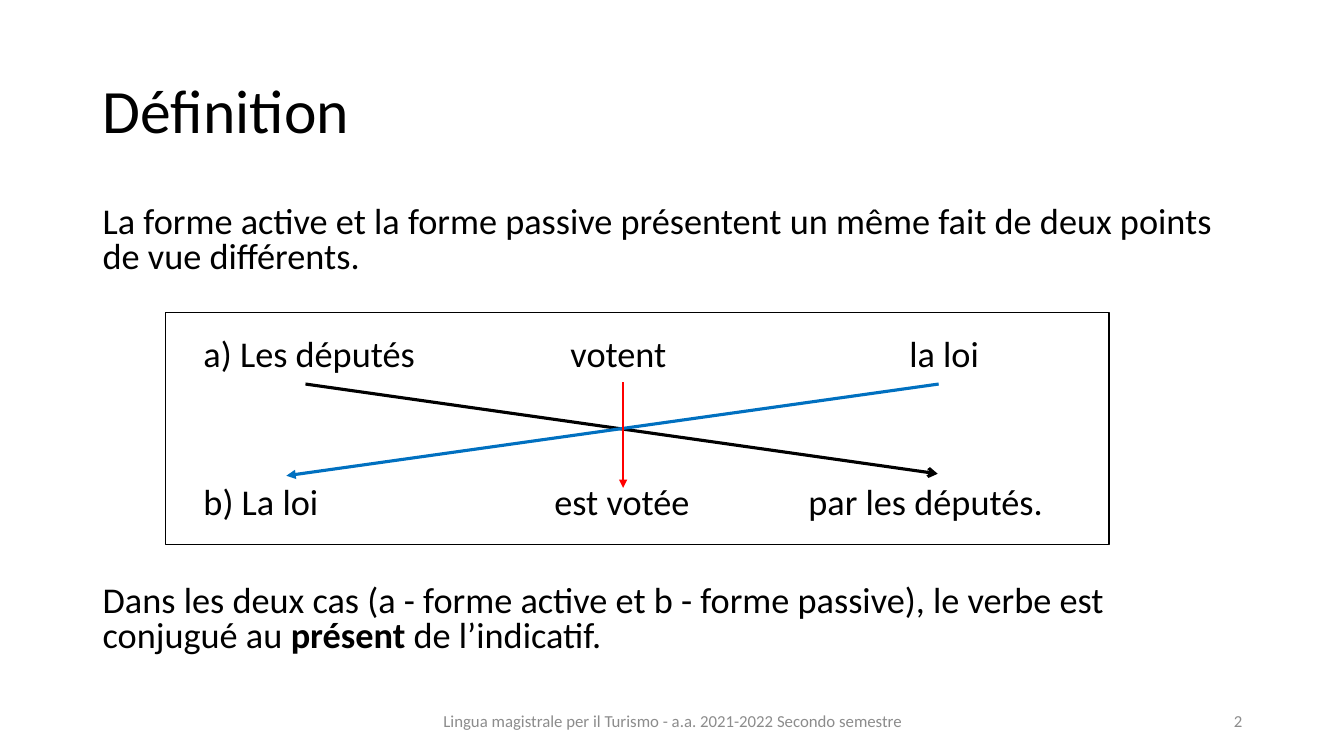
import pptx
import pptx.util
import pptx.dml.color
import pptx.enum.text
import pptx.enum.shapes
import pptx.oxml.ns
from dataclasses import dataclass
from lxml import etree

Inches, Pt = pptx.util.Inches, pptx.util.Pt
Align, Anchor = pptx.enum.text.PP_ALIGN, pptx.enum.text.MSO_ANCHOR
qn = pptx.oxml.ns.qn


@dataclass(frozen=True)
class Theme:
    font: str = "Calibri"
    ink: str = "000000"
    gray: str = "8C8C8C"
    blue: str = "0070C0"
    red: str = "FF0000"
    title: float = 44
    body: float = 25.9
    foot: float = 12


THEME = Theme()


def tint(code):
    return pptx.dml.color.RGBColor.from_string(code)


def frame(slide, box, anchor=Anchor.MIDDLE):
    area = slide.shapes.add_textbox(*map(Inches, box)).text_frame
    area.word_wrap = True
    area.vertical_anchor = anchor
    return area


def write(area, *runs, size=THEME.body, color=THEME.ink, align=Align.LEFT,
          line=1.0, before=0, tabs=()):
    """Add a paragraph; a run is a string or a (string, bold) pair."""
    para = area.paragraphs[0]
    if para.runs:
        para = area.add_paragraph()
    para.alignment = align
    para.line_spacing = line
    para.space_before = Pt(before)
    if tabs:
        stops = etree.SubElement(para._p.get_or_add_pPr(), qn("a:tabLst"))
        for stop in tabs:
            etree.SubElement(stops, qn("a:tab"), pos=str(Inches(stop)), algn="l")
    for item in runs:
        words, bold = (item, False) if isinstance(item, str) else item
        run = para.add_run()
        run.text = words
        font = run.font
        font.name, font.size, font.bold = THEME.font, Pt(size), bold
        font.color.rgb = tint(color)


def title(slide, box):
    write(frame(slide, box), "Définition", size=THEME.title, line=0.9)


def body(slide, box):
    area = frame(slide, box, Anchor.TOP)
    gap, row = 10, 35.3
    write(area, "La forme active et la forme passive présentent un même fait "
          "de deux points de vue différents.", line=0.8, before=gap)
    write(area, "\ta) Les députés\tvotent\tla loi",
          line=0.8, before=gap + row, tabs=(1, 4.64, 8))
    write(area, "\tb) La loi\test votée\tpar les députés.",
          line=0.8, before=gap + 2 * row, tabs=(1, 4.48, 7))
    write(area, "Dans les deux cas (a - forme active et b - forme passive), "
          "le verbe est conjugué au ", ("présent", True), " de l’indicatif.",
          line=0.8, before=gap + row)


def arrow(slide, start, end, color, width, head="triangle"):
    link = slide.shapes.add_connector(
        pptx.enum.shapes.MSO_CONNECTOR.STRAIGHT, *map(Inches, start + end))
    link.line.color.rgb = tint(color)
    link.line.width = Pt(width)
    etree.SubElement(link.line._get_or_add_ln(), qn("a:tailEnd"), type=head)
    etree.SubElement(link._element.spPr, qn("a:effectLst"))


def diagram(slide, box):
    """Frame the two sentences and cross the arrows between them."""
    left, top, width, height = box

    def spot(x, y):
        return left + x, top + y

    arrow(slide, spot(1.39, 0.71), spot(7.66, 1.6), THEME.ink, 2.25, "arrow")
    arrow(slide, spot(7.67, 0.71), spot(1.2, 1.62), THEME.blue, 2.25)
    arrow(slide, spot(4.54, 0.69), spot(4.54, 1.74), THEME.red, 1.5)
    rect = slide.shapes.add_shape(
        pptx.enum.shapes.MSO_SHAPE.RECTANGLE, *map(Inches, box))
    rect.shadow.inherit = False
    rect.fill.background()
    rect.line.color.rgb = tint(THEME.ink)
    rect.line.width = Pt(1)


def footer(slide, box):
    left, top, width, height = box
    look = dict(size=THEME.foot, color=THEME.gray)
    write(frame(slide, (left, top, 4.89, height)),
          "Lingua magistrale per il Turismo - a.a. 2021-2022 Secondo semestre",
          align=Align.CENTER, **look)
    write(frame(slide, (left + width - 3, top, 3, height)), "2",
          align=Align.RIGHT, **look)


def main():
    deck = pptx.Presentation()
    deck.slide_width, deck.slide_height = Inches(13.33), Inches(7.5)
    slide = deck.slides.add_slide(deck.slide_layouts[6])
    title(slide, (0.92, 0.4, 11.5, 1.45))
    body(slide, (0.92, 2, 11.5, 4.76))
    footer(slide, (4.23, 6.95, 8.19, 0.4))
    diagram(slide, (1.64, 3.1, 9.36, 2.3))
    deck.save("out.pptx")


if __name__ == "__main__":
    main()
